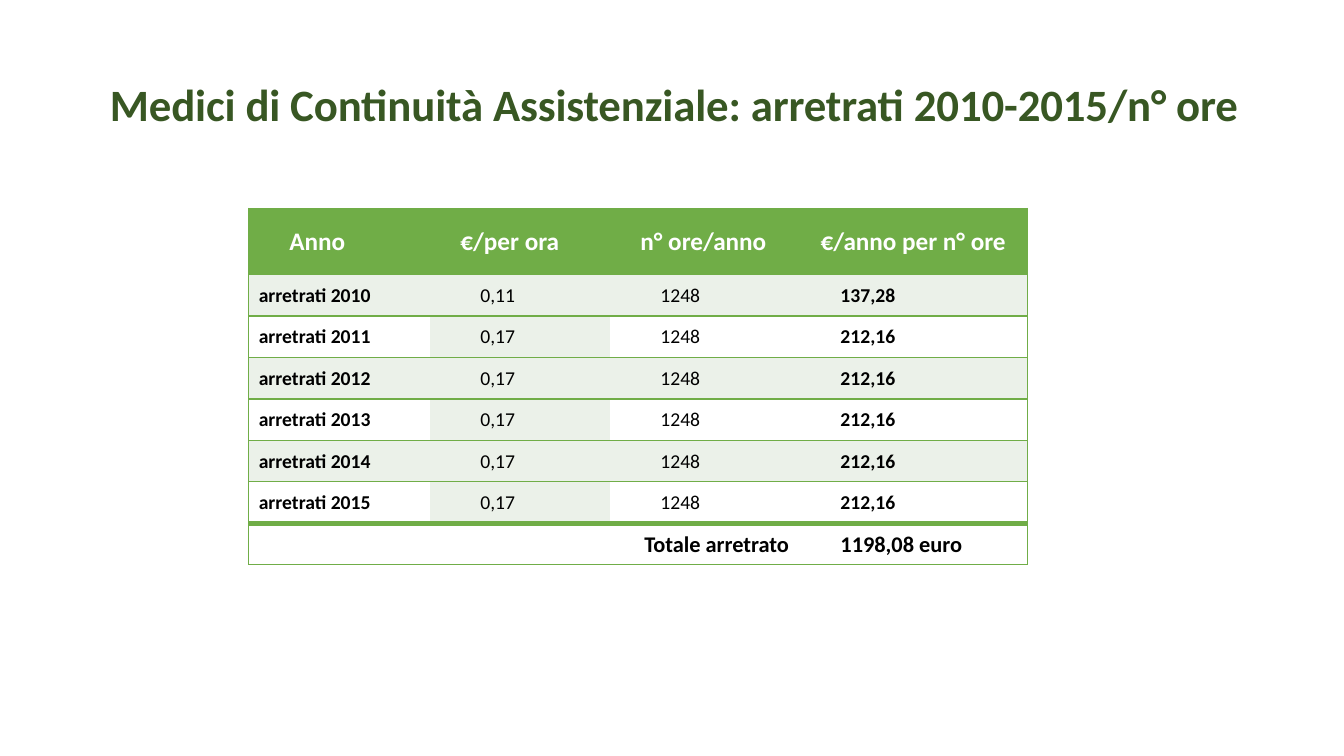
from dataclasses import dataclass

from lxml.etree import SubElement as Sub
from pptx import Presentation
from pptx.dml.color import RGBColor as Rgb
from pptx.enum.text import MSO_ANCHOR as Anchor
from pptx.enum.text import MSO_AUTO_SIZE as Fit
from pptx.enum.text import PP_ALIGN as Align
from pptx.oxml.ns import qn
from pptx.util import Emu, Pt

SCALE = 914400 / 192  # EMU per px


@dataclass(frozen=True)
class Theme:
    font: str = "Calibri"
    title: str = "385723"
    green: str = "70AD47"
    tint: str = "EBF1E9"
    white: str = "FFFFFF"
    black: str = "000000"
    big: int = 32
    head: int = 18
    body: int = 14
    total: int = 16
    thin: int = 1
    thick: int = 4


@dataclass(frozen=True)
class Item:
    text: str
    size: int
    fill: str
    inset: int
    ink: str = Theme.black
    bold: bool = True
    align: Align = Align.LEFT


LOOK = Theme()
WIDTHS = (345, 343, 343, 453)
HEADS = ("Anno", "€/per ora", "n° ore/anno", "€/anno per n° ore")
HEAD_H, ROW_H = 126, 79
RATES = {2010: ("0,11", "137,28")}
USUAL = ("0,17", "212,16")


def px(n: int) -> Emu:
    return Emu(round(n * SCALE))


def place(shape, left: int, top: int, width: int, height: int) -> None:
    box = {"left": left, "top": top, "width": width, "height": height}
    for name, value in box.items():
        setattr(shape, name, px(value))


def write(par, text: str, size: int, ink: str, bold: bool):
    run = par.add_run()
    run.text = text
    style = {"name": LOOK.font, "size": Pt(size), "bold": bold}
    for name, value in style.items():
        setattr(run.font, name, value)
    run.font.color.rgb = Rgb.from_string(ink)
    return run


def edge(cell, sides: dict[str, int]) -> None:
    """Draw the sides given in points; zero leaves a side clear."""
    props = cell._tc.get_or_add_tcPr()
    for spot, side in enumerate("LRTB"):
        width = sides[side]
        line = Sub(props, qn(f"a:ln{side}"), w=str(Pt(width)))
        if width:
            fill = Sub(line, qn("a:solidFill"))
            Sub(fill, qn("a:srgbClr"), val=LOOK.green)
        else:
            Sub(line, qn("a:noFill"))
        props.insert(spot, line)


def fill_cell(cell, item: Item) -> None:
    layout = {"vertical_anchor": Anchor.MIDDLE, "margin_left": px(item.inset),
              "margin_right": px(2), "margin_top": px(2), "margin_bottom": 0}
    for name, value in layout.items():
        setattr(cell, name, value)
    cell.fill.solid()
    cell.fill.fore_color.rgb = Rgb.from_string(item.fill)
    par = cell.text_frame.paragraphs[0]
    par.alignment = item.align
    if item.text:
        write(par, item.text, item.size, item.ink, item.bold)


def year_row(year: int) -> list[Item]:
    rate, total = RATES.get(year, USUAL)
    band = LOOK.white if year % 2 else LOOK.tint
    size = LOOK.body
    return [
        Item(f"arretrati {year}", size, band, 19),
        Item(rate, size, LOOK.tint, 96, bold=False),
        Item("1248", size, band, 96, bold=False),
        Item(total, size, band, 96),
    ]


def make_rows() -> list[list[Item]]:
    head = [Item(text, LOOK.head, LOOK.green, 58 if col else 77, LOOK.white)
            for col, text in enumerate(HEADS)]
    blank = Item("", LOOK.total, LOOK.white, 2)
    total = [
        Item("Totale arretrato", LOOK.total, LOOK.white, 2, align=Align.RIGHT),
        blank, blank,
        Item("1198,08 euro", LOOK.total, LOOK.white, 96),
    ]
    return [head, *map(year_row, range(2010, 2016)), total]


def add_title(slide) -> None:
    title = slide.shapes.title
    place(title, 180, 64, 2208, 278)
    frame = title.text_frame
    for name, value in {"word_wrap": True, "auto_size": Fit.NONE,
                        "vertical_anchor": Anchor.MIDDLE}.items():
        setattr(frame, name, value)
    par = frame.paragraphs[0]
    for name, value in {"alignment": Align.CENTER, "line_spacing": 0.9,
                        "space_before": Pt(10)}.items():
        setattr(par, name, value)
    text = "Medici di Continuità Assistenziale: arretrati 2010-2015/n° ore"
    run = write(par, text, LOOK.big, LOOK.title, True)
    run._r.get_or_add_rPr().set("spc", "-10")


def add_grid(slide) -> None:
    rows = make_rows()
    last, end = len(rows) - 1, len(WIDTHS) - 1
    box = (474, 397, sum(WIDTHS), HEAD_H + last * ROW_H)
    table = slide.shapes.add_table(len(rows), len(WIDTHS), *map(px, box)).table
    table.first_row = table.horz_banding = False
    for col, width in enumerate(WIDTHS):
        table.columns[col].width = px(width)
    for r, items in enumerate(rows):
        table.rows[r].height = px(ROW_H if r else HEAD_H)
        for c, item in enumerate(items):
            cell = table.cell(r, c)
            fill_cell(cell, item)
            edge(cell, {
                "L": LOOK.thin if c == 0 else 0,
                "R": LOOK.thin if c == end else 0,
                "T": LOOK.thick if r == last else LOOK.thin,
                "B": LOOK.thick if r == last - 1 else LOOK.thin,
            })
    table.cell(last, 0).merge(table.cell(last, end - 1))


def main() -> None:
    deck = Presentation()
    deck.slide_width, deck.slide_height = px(2560), px(1440)
    slide = deck.slides.add_slide(deck.slide_layouts[5])
    add_title(slide)
    add_grid(slide)
    deck.save("out.pptx")


if __name__ == "__main__":
    main()
